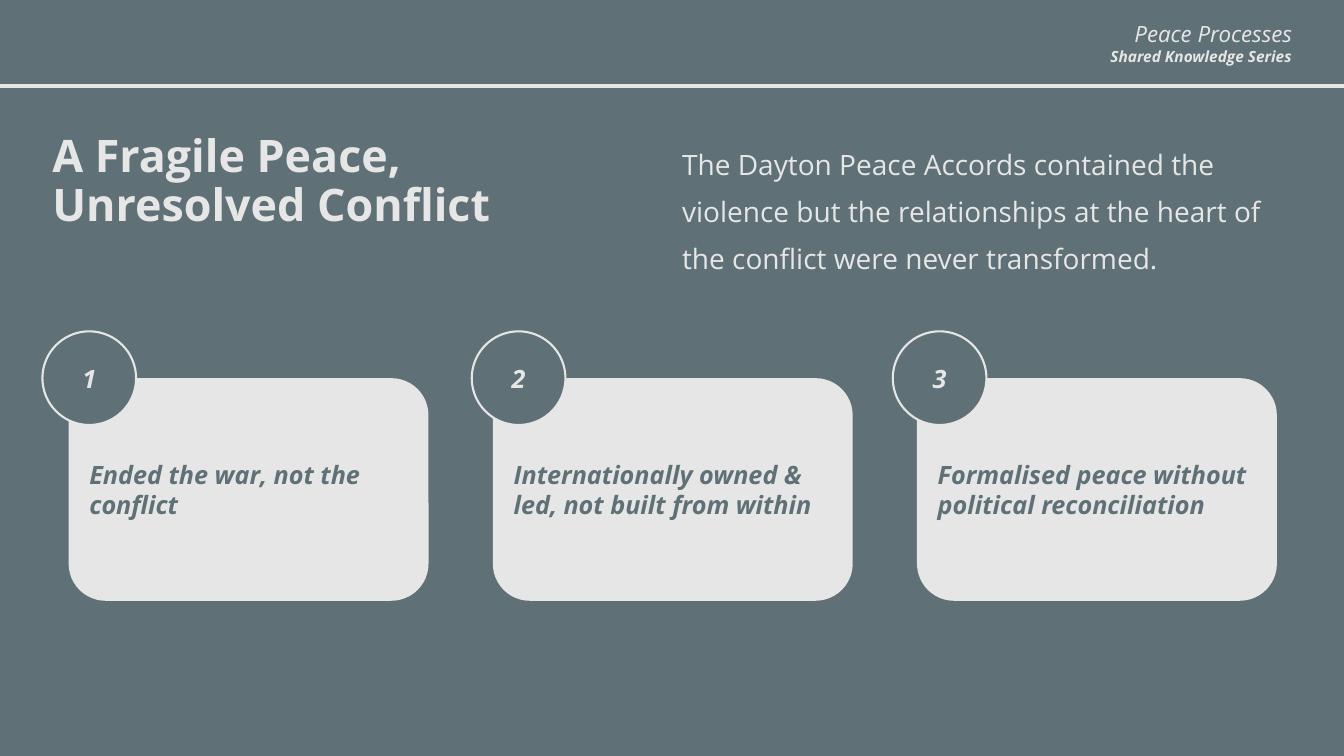
from lxml.etree import SubElement
from pptx import Presentation
from pptx.dml.color import RGBColor
from pptx.enum.shapes import MSO_CONNECTOR, MSO_SHAPE
from pptx.enum.text import MSO_ANCHOR, PP_ALIGN
from pptx.oxml.ns import qn
from pptx.util import Cm, Pt

SLATE, PALE = "5F7176", "E6E6E6"
FONT = "Open Sans"

SERIES = [("Peace Processes", 16, False), ("Shared Knowledge Series", 11, True)]
TITLE = "A Fragile Peace,\vUnresolved Conflict"
SUMMARY = (
    "The Dayton Peace Accords contained the violence but the relationships "
    "at the heart of the conflict were never transformed."
)
POINTS = [
    ("Ended the war, not the conflict", 1.07),
    ("Internationally owned & led, not built from within", 11.89),
    ("Formalised peace without political reconciliation", 22.5),
]

SLIDE_W, SLIDE_H = 33.87, 19.05
RULE_Y = 2.16
HEAD_TOP, HEAD_H = 3.25, 3.76
CARD_LEFT, CARD_TOP, CARD_W, CARD_H = 1.73, 9.53, 9.07, 5.61
CARD_PITCH = 10.69
BADGE = 2.36


def rgb(color):
    return RGBColor.from_string(color)


def write(p, text, size, color, bold=False, italic=False, align=PP_ALIGN.LEFT):
    p.text = text
    p.alignment = align
    p.font.name = FONT
    p.font.size = Pt(size)
    p.font.bold = bold
    p.font.italic = italic
    p.font.color.rgb = rgb(color)


def add_text(s, left, top, width, height):
    tf = s.shapes.add_textbox(Cm(left), Cm(top), Cm(width), Cm(height)).text_frame
    tf.word_wrap = True
    return tf


def add_label(s, kind, left, top, width, height, fill, text, color, align):
    sp = s.shapes.add_shape(kind, Cm(left), Cm(top), Cm(width), Cm(height))
    sp.shadow.inherit = False
    sp.fill.solid()
    sp.fill.fore_color.rgb = rgb(fill)
    sp.line.fill.background()
    tf = sp.text_frame
    tf.word_wrap = True
    tf.vertical_anchor = MSO_ANCHOR.MIDDLE
    write(tf.paragraphs[0], text, 18, color, True, True, align)
    return sp


def add_header(s):
    tf = add_text(s, 27.53, 0.38, 5.28, 1.42)
    for i, (text, size, bold) in enumerate(SERIES):
        p = tf.add_paragraph() if i else tf.paragraphs[0]
        write(p, text, size, PALE, bold, True, PP_ALIGN.RIGHT)

    rule = s.shapes.add_connector(
        MSO_CONNECTOR.STRAIGHT, 0, Cm(RULE_Y), Cm(SLIDE_W), Cm(RULE_Y)
    )
    rule.line.color.rgb = rgb(PALE)
    rule.line.width = Pt(3)
    SubElement(rule._element.spPr, qn("a:effectLst"))


def add_heading(s):
    p = add_text(s, 16.94, HEAD_TOP, 15.88, HEAD_H).paragraphs[0]
    write(p, SUMMARY, 20, PALE)
    p.line_spacing = 1.4

    p = add_text(s, 1.07, HEAD_TOP, 15.44, HEAD_H).paragraphs[0]
    write(p, TITLE, 32, PALE, bold=True)
    p.line_spacing = 0.9


def add_points(s):
    for i, (text, badge_left) in enumerate(POINTS):
        add_label(s, MSO_SHAPE.ROUNDED_RECTANGLE, CARD_LEFT + i * CARD_PITCH,
                  CARD_TOP, CARD_W, CARD_H, PALE, text, SLATE, PP_ALIGN.LEFT)
        badge = add_label(s, MSO_SHAPE.OVAL, badge_left, CARD_TOP - BADGE / 2,
                          BADGE, BADGE, SLATE, str(i + 1), PALE, PP_ALIGN.CENTER)
        badge.line.color.rgb = rgb(PALE)
        badge.line.width = Pt(1.5)


def main():
    prs = Presentation()
    prs.slide_width, prs.slide_height = Cm(SLIDE_W), Cm(SLIDE_H)
    s = prs.slides.add_slide(prs.slide_layouts[6])
    s.background.fill.solid()
    s.background.fill.fore_color.rgb = rgb(SLATE)
    add_header(s)
    add_heading(s)
    add_points(s)
    prs.save("out.pptx")


if __name__ == "__main__":
    main()
